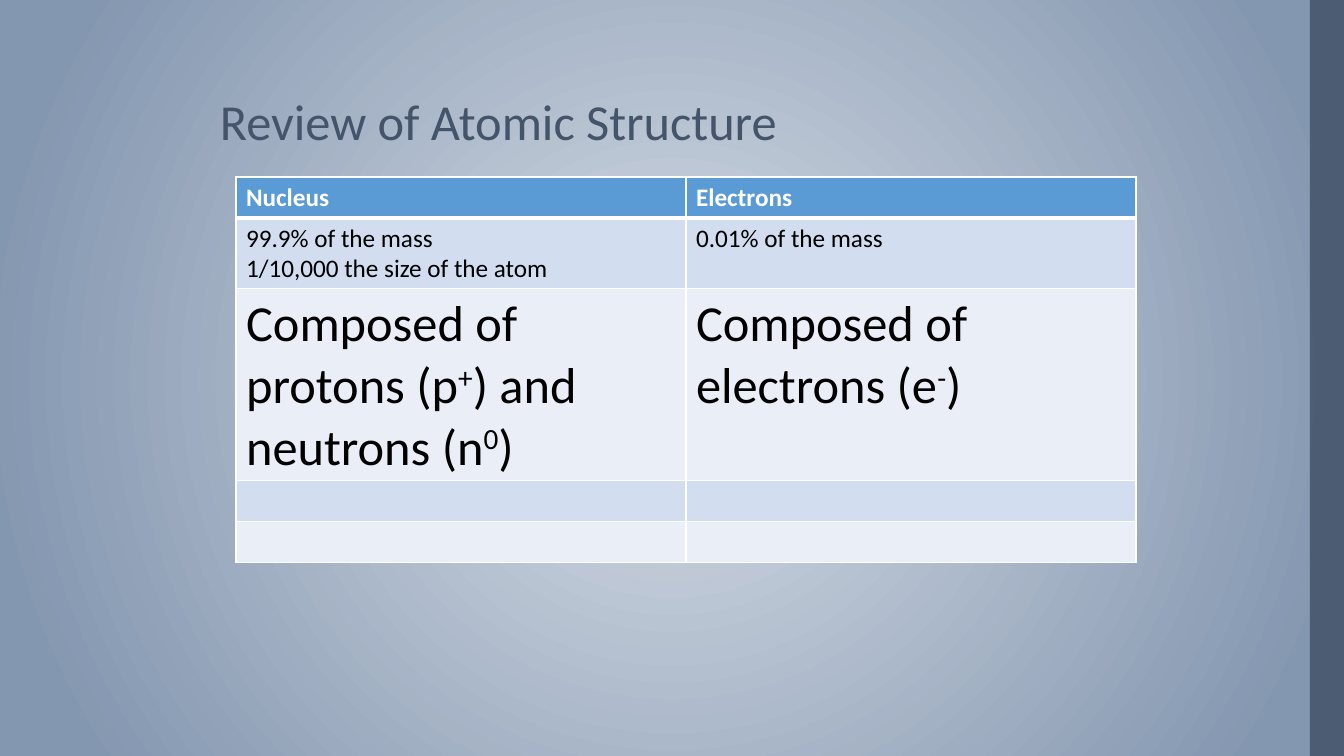
from lxml import etree
from pptx import Presentation
from pptx.dml.color import RGBColor as RGB
from pptx.enum.shapes import MSO_SHAPE as SHAPE
from pptx.enum.text import MSO_ANCHOR as ANCHOR
from pptx.oxml import parse_xml
from pptx.oxml.ns import nsdecls, qn
from pptx.util import Emu, Pt

COLORS = {
    "center": "D6DCE5", "edge": "8497B0", "slate": "44546A",
    "header": "5B9BD5", "odd": "D2DEEF", "even": "EAEFF7",
    "white": "FFFFFF", "black": "000000",
}
ROWS = [
    ("Nucleus", "Electrons"),
    ("99.9% of the mass\n1/10,000 the size of the atom", "0.01% of the mass"),
    ("Composed of protons (p^+^) and neutrons (n^0^)",
     "Composed of electrons (e^-^)"),
    ("", ""),
    ("", ""),
]
LARGE_ROW = 2


def px(n):
    return Emu(round(n * 914400 / 100.8))


def rgb(name):
    return RGB.from_string(COLORS[name])


def write_text(tf, text, size=18, color="black", bold=False, spacing=None):
    """Write one paragraph per line; text between carets is superscript."""
    tf.word_wrap = True
    for i, line in enumerate(text.split("\n")):
        p = tf.add_paragraph() if i else tf.paragraphs[0]
        p.line_spacing = spacing
        for j, part in enumerate(line.split("^")):
            if not part:
                continue
            r = p.add_run()
            r.text = part
            r.font.name, r.font.size, r.font.bold = "Calibri", Pt(size), bold
            r.font.color.rgb = rgb(color)
            if j % 2:
                r.font._element.set("baseline", "30000")


def set_background(s):
    fill = s.background.fill
    fill.gradient()
    stops = zip(fill.gradient_stops, (("center", 0), ("edge", 0.9)))
    for stop, (color, position) in stops:
        stop.color.rgb = rgb(color)
        stop.position = position
    grad = s._element.find(".//" + qn("a:gradFill"))
    radial = parse_xml(
        f'<a:path {nsdecls("a")} path="circle"><a:fillToRect l="50000" '
        't="50000" r="50000" b="50000"/></a:path>')
    grad.replace(grad.find(qn("a:lin")), radial)


def add_side_bar(s):
    sp = s.shapes.add_shape(SHAPE.RECTANGLE, px(1310), 0, px(34), px(756))
    sp.shadow.inherit = False
    sp.line.fill.background()
    sp.fill.solid()
    sp.fill.fore_color.rgb = rgb("slate")
    color = sp._element.spPr.find(".//" + qn("a:srgbClr"))
    etree.SubElement(color, qn("a:alpha"), val="87000")


def add_title(s, text):
    tf = s.shapes.add_textbox(px(210), px(19), px(1044), px(137)).text_frame
    tf.vertical_anchor = ANCHOR.BOTTOM
    write_text(tf, text, size=36, color="slate", spacing=0.9)


def set_borders(cell, top=1, bottom=1):
    tcPr = cell._tc.get_or_add_tcPr()
    for side, width in (("L", 1), ("R", 1), ("T", top), ("B", bottom)):
        tcPr.append(parse_xml(
            f'<a:ln{side} {nsdecls("a")} w="{Pt(width)}"><a:solidFill>'
            f'<a:srgbClr val="{COLORS["white"]}"/></a:solidFill></a:ln{side}>'))


def add_comparison_table(s):
    row_h, col_w = 41, 450
    table = s.shapes.add_table(len(ROWS), 2, px(236), px(177),
                               px(2 * col_w), px(len(ROWS) * row_h)).table
    for i, texts in enumerate(ROWS):
        header = i == 0
        fill = "header" if header else "odd" if i % 2 else "even"
        for j, text in enumerate(texts):
            cell = table.cell(i, j)
            set_borders(cell, top=3 if i == 1 else 1, bottom=3 if header else 1)
            cell.fill.solid()
            cell.fill.fore_color.rgb = rgb(fill)
            write_text(cell.text_frame, text,
                       size=36 if i == LARGE_ROW else 18,
                       color="white" if header else "black", bold=header)


def main():
    prs = Presentation()
    prs.slide_width, prs.slide_height = px(1344), px(756)
    s = prs.slides.add_slide(prs.slide_layouts[6])
    set_background(s)
    add_side_bar(s)
    add_title(s, "Review of Atomic Structure")
    add_comparison_table(s)
    prs.save("out.pptx")


if __name__ == "__main__":
    main()
